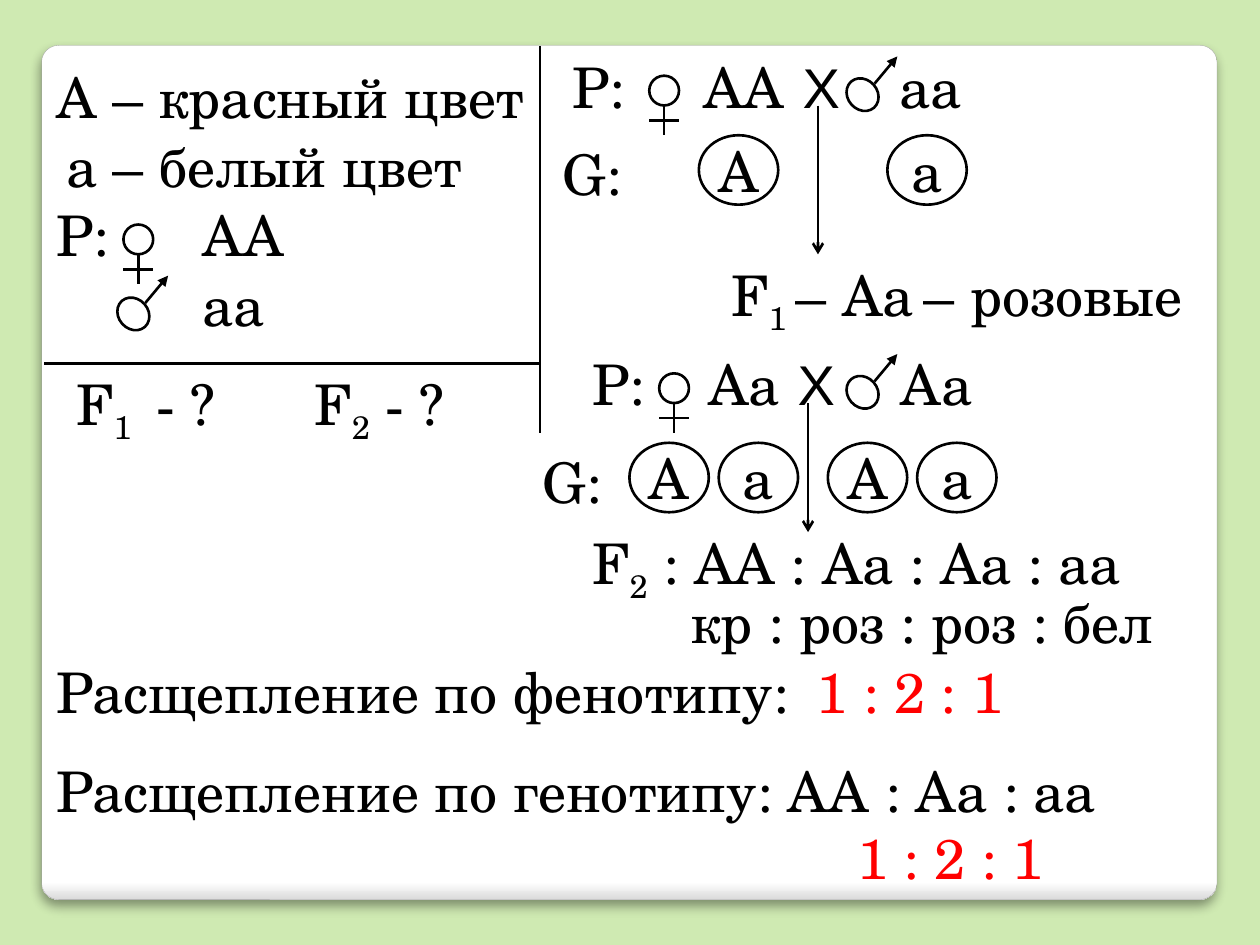
from dataclasses import dataclass, field
from typing import NamedTuple

from lxml.etree import SubElement as Sub
from pptx import Presentation
from pptx.dml.color import RGBColor
from pptx.enum.shapes import MSO_CONNECTOR as Conn, MSO_SHAPE as Form
from pptx.enum.text import MSO_ANCHOR as Anchor, PP_ALIGN as Align
from pptx.oxml.ns import qn
from pptx.util import Emu, Inches, Pt

BLACK = RGBColor(0, 0, 0)
WHITE = RGBColor(255, 255, 255)
RED = RGBColor(255, 0, 0)
GREEN = RGBColor(0xCF, 0xEA, 0xB2)
GREY = RGBColor(0xA4, 0xA4, 0xA4)
SHADE = RGBColor(0xDA, 0xDA, 0xDA)
SERIF, SANS = "TeX Gyre Schola", "Arial"
UNIT = 72000
EDGE, TOP = Inches(0.35), Inches(0.365)


class Run(NamedTuple):
    text: str
    font: str = SERIF
    color: RGBColor = BLACK
    low: bool = False


@dataclass
class Label:
    col: float
    row: float
    width: float
    lines: list
    tabs: list = field(default_factory=list)


class Gamete(NamedTuple):
    col: float
    row: float
    text: str


class Line(NamedTuple):
    x1: float
    y1: float
    x2: float
    y2: float
    head: str = ""


class Spot(NamedTuple):
    col: float
    row: float


def span(n: float) -> Emu:
    return Emu(round(n * UNIT))


def left(col: float) -> Emu:
    return Emu(EDGE + span(col))


def top(row: float) -> Emu:
    return Emu(TOP + span(row))


def put(para, text: str, *, font=SERIF, color=BLACK, low=False) -> None:
    run = para.add_run()
    run.text = text
    run.font.name = font
    run.font.size = Pt(32)
    run.font.color.rgb = color
    if low:
        run.font._element.set("baseline", "-25000")


def write(shapes, label: Label) -> None:
    box = shapes.add_textbox(left(label.col), top(label.row),
                             span(label.width), Inches(0.64))
    frame = box.text_frame
    frame.word_wrap = True
    for i, runs in enumerate(label.lines):
        para = frame.add_paragraph() if i else frame.paragraphs[0]
        if label.tabs:
            stops = Sub(para._p.get_or_add_pPr(), qn("a:tabLst"))
            for col in label.tabs:
                Sub(stops, qn("a:tab"), pos=str(span(col - label.col)), algn="l")
        for run in runs:
            put(para, run.text, font=run.font, color=run.color, low=run.low)


def line(shapes, item: Line) -> None:
    link = shapes.add_connector(Conn.STRAIGHT, left(item.x1), top(item.y1),
                                left(item.x2), top(item.y2))
    link.line.color.rgb = BLACK
    link.line.width = Pt(1.5)
    if item.head:
        Sub(link.line._get_or_add_ln(), qn("a:tailEnd"), type=item.head)
    Sub(link._element.spPr, qn("a:effectLst"))


def oval(shapes, col: float, row: float, wide: float, high: float):
    ring = shapes.add_shape(Form.OVAL, left(col), top(row), span(wide), span(high))
    ring.shadow.inherit = False
    ring.fill.solid()
    ring.fill.fore_color.rgb = WHITE
    ring.line.color.rgb = BLACK
    ring.line.width = Pt(1.5)
    return ring


def cell(shapes, item: Gamete) -> None:
    frame = oval(shapes, item.col, item.row, 8, 7).text_frame
    frame.margin_left = frame.margin_right = 0
    frame.margin_top = frame.margin_bottom = 0
    frame.vertical_anchor = Anchor.MIDDLE
    para = frame.paragraphs[0]
    para.alignment = Align.CENTER
    put(para, item.text)


def female(shapes, spot: Spot) -> None:
    col, row = spot
    oval(shapes, col, row, 3, 3)
    line(shapes, Line(col + 1.5, row + 3, col + 1.5, row + 6))
    line(shapes, Line(col, row + 4.5, col + 3, row + 4.5))


def male(shapes, spot: Spot) -> None:
    col, row = spot
    oval(shapes, col, row, 3.5, 3).rotation = 228.6
    line(shapes, Line(col + 2.95, row + 0.4, col + 5.25, row - 2.35, "triangle"))


def card(shapes) -> None:
    base = shapes.add_shape(Form.ROUNDED_RECTANGLE, Inches(0.33), Inches(0.36),
                            Inches(9.33), Inches(6.78))
    base.adjustments[0] = 0.02
    base.fill.gradient()
    base.fill.gradient_angle = 270
    for stop, place, color in zip(base.fill.gradient_stops, (0.98, 1), (WHITE, SHADE)):
        stop.position = place
        stop.color.rgb = color
    base.line.color.rgb = GREY
    base.line.width = Pt(0.16)
    base.shadow.inherit = False
    glow = Sub(base._element.spPr.find(qn("a:effectLst")), qn("a:outerShdw"),
               blurRad=str(Pt(6)), dist=str(Pt(4)), dir="5400000", rotWithShape="0")
    Sub(Sub(glow, qn("a:srgbClr"), val=str(BLACK)), qn("a:alpha"), val="40000")


LABELS = [
    Label(0, 1, 52, [[Run("А – красный цвет")]]),
    Label(1, 8, 45, [[Run("а – белый цвет")]]),
    Label(0, 15, 32, [[Run("Р:\tАА")]], [14.75]),
    Label(14.7, 22, 14, [[Run("аа")]]),
    Label(2, 32, 20, [[Run("F"), Run("1 ", low=True), Run(" - ?")]]),
    Label(26, 32, 20, [[Run("F"), Run("2", low=True), Run(" - ?")]]),
    Label(52, 0, 64, [[Run("Р:\tАА\t"), Run("Х\t", SANS), Run("аа")]],
          [65.2, 75.2, 85]),
    Label(68, 21, 24, [[Run("F"), Run("1 ", low=True), Run("– Аа")]]),
    Label(87.4, 21, 31, [[Run("– розовые")]]),
    Label(54, 30, 62, [[Run("Р:\tАа\t"), Run("Х\t", SANS), Run("Аа")]],
          [65.7, 74.7, 85.1]),
    Label(54, 48, 62, [[Run("F"), Run("2", low=True), Run(" : АА : Аа : Аа : аа")]]),
    Label(64, 54, 54, [[Run("кр : роз : роз : бел")]]),
    Label(0, 61, 116, [[Run("Расщепление по фенотипу:\t"),
                        Run("1 : 2 : 1", color=RED)]], [76.6]),
    Label(0, 71, 118, [[Run("Расщепление по генотипу: АА : Аа : аа")],
                       [Run("\t1 : 2 : 1", color=RED)]], [80.7]),
    Label(51, 8.8, 10, [[Run("G:")]]),
    Label(49, 39.8, 10, [[Run("G:")]]),
]
LINES = [
    Line(50, 0, 50, 39),
    Line(0, 32, 50, 32),
    Line(78, 6, 78, 21, "arrow"),
    Line(77, 36, 77, 49, "arrow"),
]
CELLS = [Gamete(66, 9, "А"), Gamete(85, 9, "а")] + [
    Gamete(col + step, 40, text)
    for col in (59, 79) for step, text in ((0, "А"), (9, "а"))
]
FEMALES = [Spot(8, 18), Spot(61, 3), Spot(62, 33)]
MALES = [Spot(7.25, 25.5), Spot(80.75, 3.4), Spot(80.75, 33.4)]


def main() -> None:
    deck = Presentation()
    deck.slide_width, deck.slide_height = Inches(10), Inches(7.5)
    slide = deck.slides.add_slide(deck.slide_layouts[6])
    slide.background.fill.solid()
    slide.background.fill.fore_color.rgb = GREEN
    shapes = slide.shapes
    card(shapes)
    for draw, items in ((write, LABELS), (line, LINES), (cell, CELLS),
                        (female, FEMALES), (male, MALES)):
        for item in items:
            draw(shapes, item)
    deck.save("out.pptx")


if __name__ == "__main__":
    main()
